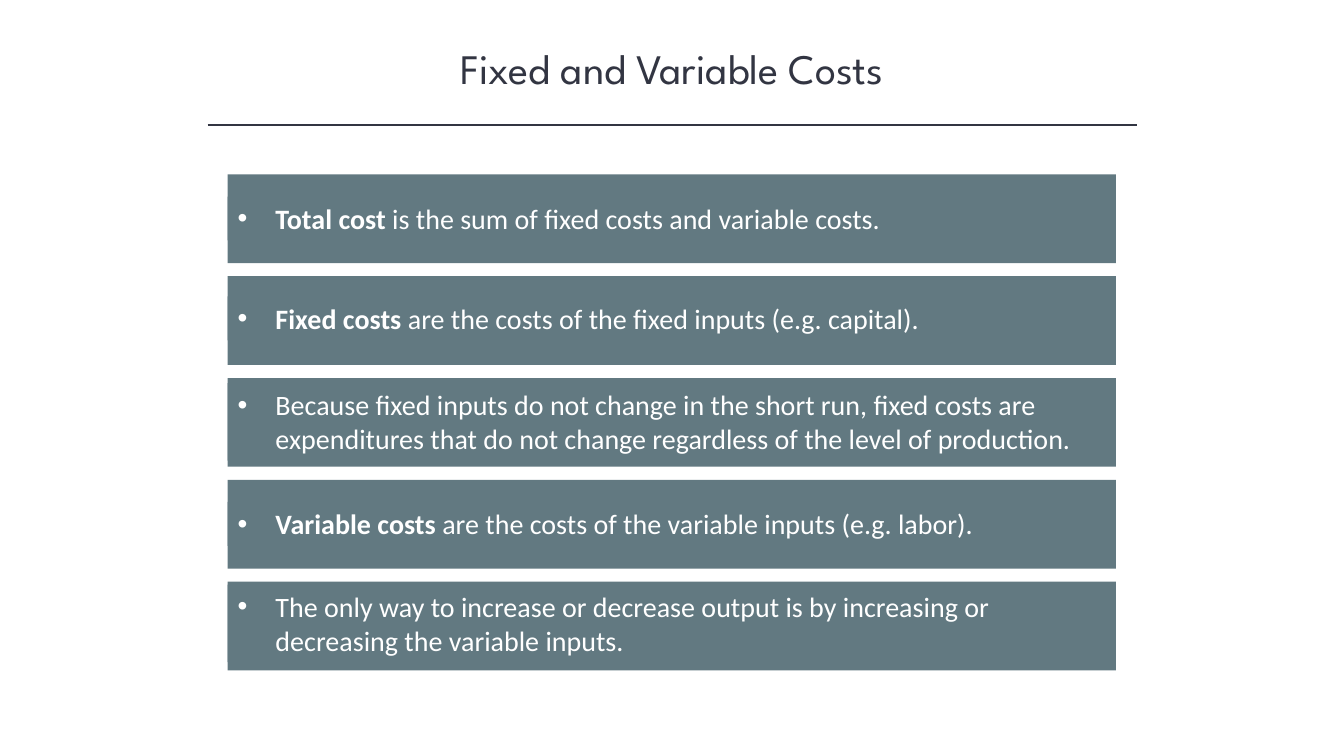
from lxml.etree import SubElement
from pptx import Presentation
from pptx.dml.color import RGBColor
from pptx.enum.shapes import MSO_CONNECTOR, MSO_SHAPE
from pptx.enum.text import MSO_ANCHOR, MSO_AUTO_SIZE, PP_ALIGN
from pptx.oxml.ns import qn
from pptx.util import Pt

# Content: bold lead, rest of the sentence, number of lines, text offset in the bar
TITLE = "Fixed and Variable Costs"
POINTS = [
    ("Total cost ", "is the sum of fixed costs and variable costs.", 1, 15.8),
    ("Fixed costs ", "are the costs of the fixed inputs (e.g. capital).", 1, 14.4),
    ("", "Because fixed inputs do not change in the short run, fixed costs are "
     "expenditures that do not change regardless of the level of production.", 2, 3.6),
    ("Variable costs ", "are the costs of the variable inputs (e.g. labor).", 1, 15.8),
    ("", "The only way to increase or decrease output is by increasing or "
     "decreasing the variable inputs.", 2, 2.2),
]

THEME = {
    "ink": RGBColor.from_string("323542"),
    "bar": RGBColor.from_string("627981"),
    "light": RGBColor.from_string("FFFFFF"),
    "title_font": "League Spartan", "title_size": 30,
    "body_font": "Calibri", "body_size": 20,
}

# Layout in points
SLIDE_W, SLIDE_H = 960, 540
BAR_X, BAR_Y, BAR_W, BAR_H, BAR_STEP = 162.7, 124.6, 634.4, 63.4, 72.7
TEXT_W, LINE_H, TEXT_PAD, INDENT = 614.9, 24, 7.4, 27
RULE_X, RULE_Y, RULE_W = 148.3, 89.4, 663.9


def add_text(p, text, *, font, size, color, bold=False):
    r = p.add_run()
    r.text = text
    r.font.name, r.font.size, r.font.bold = font, Pt(size), bold
    r.font.color.rgb = color


def add_bar(shapes, x, y, w, h):
    sp = shapes.add_shape(MSO_SHAPE.RECTANGLE, Pt(x), Pt(y), Pt(w), Pt(h))
    sp.shadow.inherit = False
    sp.fill.solid()
    sp.fill.fore_color.rgb = THEME["bar"]
    sp.line.fill.background()
    return sp


def add_bullet(p):
    pPr = p._p.get_or_add_pPr()
    pPr.set("marL", str(Pt(INDENT)))
    pPr.set("indent", str(-Pt(INDENT)))
    SubElement(pPr, qn("a:buFont")).set("typeface", "Arial")
    SubElement(pPr, qn("a:buChar")).set("char", "•")


def add_point(s, y, lead, rest, lines, offset):
    shapes = s.shapes.add_group_shape().shapes
    add_bar(shapes, BAR_X, y, BAR_W, BAR_H)
    sp = add_bar(shapes, BAR_X, y + offset, TEXT_W, lines * LINE_H + TEXT_PAD)
    tf = sp.text_frame
    tf.word_wrap = True
    tf.auto_size = MSO_AUTO_SIZE.SHAPE_TO_FIT_TEXT
    tf.vertical_anchor = MSO_ANCHOR.TOP
    p = tf.paragraphs[0]
    p.alignment = PP_ALIGN.LEFT
    add_bullet(p)
    for text, bold in ((lead, True), (rest, False)):
        if text:
            add_text(p, text, font=THEME["body_font"], size=THEME["body_size"],
                     color=THEME["light"], bold=bold)


def main():
    prs = Presentation()
    prs.slide_width, prs.slide_height = Pt(SLIDE_W), Pt(SLIDE_H)
    s = prs.slides.add_slide(prs.slide_layouts[6])

    # Title
    tf = s.shapes.add_textbox(Pt(120), Pt(26.6), Pt(720), Pt(43.9)).text_frame
    tf.word_wrap = True
    tf.auto_size = MSO_AUTO_SIZE.SHAPE_TO_FIT_TEXT
    p = tf.paragraphs[0]
    p.alignment = PP_ALIGN.CENTER
    add_text(p, TITLE, font=THEME["title_font"], size=THEME["title_size"],
             color=THEME["ink"])

    # Rule under the title
    rule = s.shapes.add_connector(MSO_CONNECTOR.STRAIGHT, Pt(RULE_X), Pt(RULE_Y),
                                  Pt(RULE_X + RULE_W), Pt(RULE_Y))
    rule.line.color.rgb = THEME["ink"]
    rule.line.width = Pt(1)
    SubElement(rule._element.spPr, qn("a:effectLst"))

    # Stack of points
    for i, point in enumerate(POINTS):
        add_point(s, BAR_Y + i * BAR_STEP, *point)

    prs.save("out.pptx")


if __name__ == "__main__":
    main()
